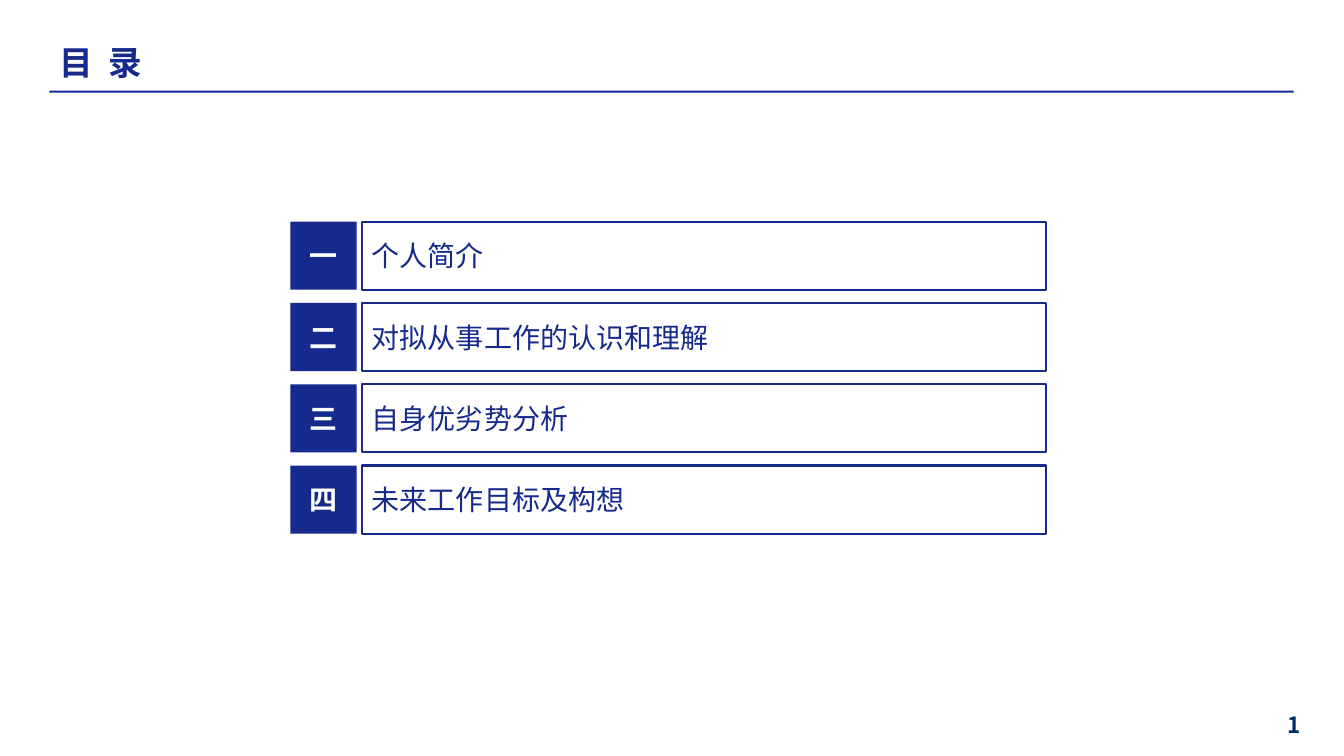
from dataclasses import dataclass

from lxml.etree import SubElement
from pptx import Presentation
from pptx.dml.color import RGBColor as Color
from pptx.enum.shapes import MSO_SHAPE as Shape
from pptx.enum.text import MSO_ANCHOR as Anchor, PP_ALIGN as Align
from pptx.oxml.ns import qn
from pptx.util import Inches, Pt


@dataclass(frozen=True)
class Theme:
    face: str = "Noto Sans CJK SC"
    navy: str = "152A8C"
    rule: str = "112D98"
    page: str = "002C6C"
    white: str = "FFFFFF"
    head: int = 24
    body: int = 20
    foot: int = 16
    edge: float = 1.5


class Deck:
    def __init__(self, theme):
        self.theme = theme
        self.show = Presentation()
        self.show.slide_width = Inches(13.33)
        self.show.slide_height = Inches(7.5)
        self.slide = self.show.slides.add_slide(self.show.slide_layouts[5])

    def area(self, left, top, width, height):
        wide, tall = self.show.slide_width, self.show.slide_height
        shares = (left, wide), (top, tall), (width, wide), (height, tall)
        return [round(share * full / 100) for share, full in shares]

    def label(self, shape, text, size, color, bold=False, align=Align.LEFT):
        frame = shape.text_frame
        frame.text = text
        frame.vertical_anchor = Anchor.MIDDLE
        line = frame.paragraphs[0]
        line.alignment = align
        font = line.runs[0].font
        font.name, font.size, font.bold = self.theme.face, Pt(size), bold
        font.color.rgb = Color.from_string(color)
        SubElement(font._element, qn("a:ea"), typeface=self.theme.face)
        return font

    def title(self, text, area, gap):
        shape = self.slide.shapes.title
        shape.left, shape.top, shape.width, shape.height = self.area(*area)
        font = self.label(shape, text, self.theme.head, self.theme.navy, True)
        font._element.set("spc", str(gap))

    def box(self, area, fill, edge=None):
        shape = self.slide.shapes.add_shape(Shape.RECTANGLE, *self.area(*area))
        shape.shadow.inherit = False
        shape.fill.solid()
        shape.fill.fore_color.rgb = Color.from_string(fill)
        if edge:
            shape.line.color.rgb = Color.from_string(edge)
            shape.line.width = Pt(self.theme.edge)
        else:
            shape.line.fill.background()
        return shape

    def item(self, mark, text, top, height):
        look = self.theme
        panel = self.box((26.93, top, 50.93, height), look.white, look.navy)
        self.label(panel, text, look.body, look.navy)
        tile = self.box((21.6, top, 4.95, height), look.navy)
        self.label(tile, mark, look.body, look.white, True, Align.CENTER)

    def number(self, text, area):
        shape = self.slide.shapes.add_textbox(*self.area(*area))
        shape.text_frame.word_wrap = False
        self.label(shape, text, self.theme.foot, self.theme.page, True)


def main():
    deck = Deck(Theme())
    deck.number("1", (95.05, 93.47, 4.95, 4.8))
    deck.box((3.68, 12, 92.57, 0.27), deck.theme.rule)
    deck.title("目 录", (3.68, 4.53, 85.07, 7.47), 270)
    items = {
        "一": "个人简介",
        "二": "对拟从事工作的认识和理解",
        "三": "自身优劣势分析",
        "四": "未来工作目标及构想",
    }
    first, pitch, height = 29.33, 10.75, 9
    for row, (mark, text) in enumerate(items.items()):
        deck.item(mark, text, first + row * pitch, height)
    deck.show.save("out.pptx")


if __name__ == "__main__":
    main()
